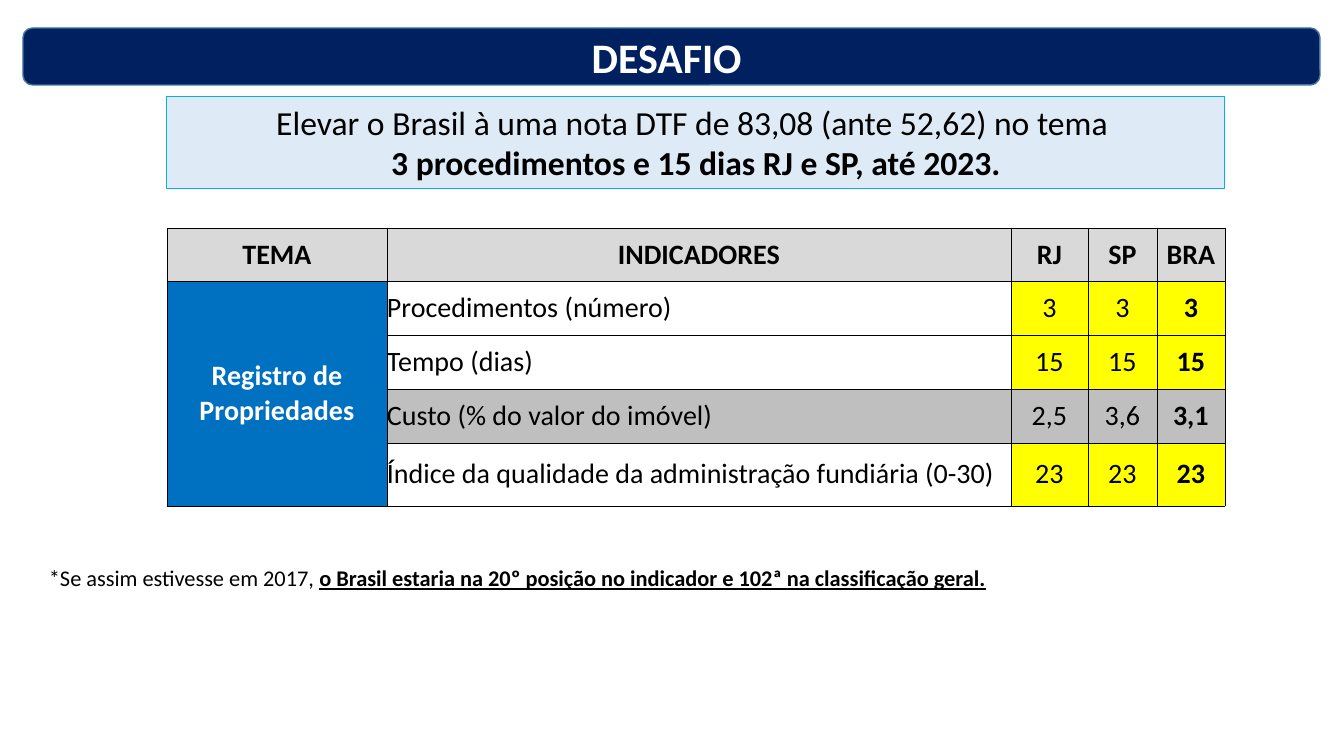
from dataclasses import dataclass

from lxml.etree import SubElement
from pptx import Presentation
from pptx.dml.color import RGBColor
from pptx.enum.shapes import MSO_SHAPE
from pptx.enum.text import MSO_ANCHOR, MSO_AUTO_SIZE, PP_ALIGN
from pptx.oxml.ns import qn
from pptx.util import Emu, Pt


@dataclass(frozen=True)
class Theme:
    font: str = "Calibri"
    black: str = "000000"
    white: str = "FFFFFF"
    navy: str = "002060"
    navy_line: str = "43739E"
    pale_blue: str = "DEEBF7"
    cyan: str = "00B0F0"
    blue: str = "0070C0"
    header: str = "D9D9D9"
    muted: str = "BFBFBF"
    target: str = "FFFF00"
    title_size: int = 30
    goal_size: int = 24
    table_size: int = 20
    note_size: int = 16
    border: float = 0.5


class SlideBuilder:
    def __init__(self, prs, theme):
        self.theme = theme
        self.s = prs.slides.add_slide(prs.slide_layouts[6])

    @staticmethod
    def px(value):
        return Emu(round(value * 914400 / 100.8))

    def box(self, *lengths):
        return [self.px(v) for v in lengths]

    def style(self, r, size, color, bold=False, underline=False):
        r.font.name = self.theme.font
        r.font.size = Pt(size)
        r.font.bold = bold
        r.font.underline = underline
        r.font.color.rgb = RGBColor.from_string(color)

    def panel(self, kind, at, fill, line, width):
        sp = self.s.shapes.add_shape(kind, *self.box(*at))
        sp.shadow.inherit = False
        sp.fill.solid()
        sp.fill.fore_color.rgb = RGBColor.from_string(fill)
        sp.line.color.rgb = RGBColor.from_string(line)
        sp.line.width = Pt(width)
        return sp

    def title(self, text, at):
        t = self.theme
        sp = self.panel(MSO_SHAPE.ROUNDED_RECTANGLE, at, t.navy, t.navy_line, 1)
        tf = sp.text_frame
        tf.text = text
        tf.vertical_anchor = MSO_ANCHOR.MIDDLE
        p = tf.paragraphs[0]
        p.alignment = PP_ALIGN.CENTER
        self.style(p.runs[0], t.title_size, t.white, bold=True)

    def goal(self, lines, at):
        t = self.theme
        sp = self.panel(MSO_SHAPE.RECTANGLE, at, t.pale_blue, t.cyan, 0.75)
        tf = sp.text_frame
        tf.text = "\n".join(lines)
        tf.word_wrap = True
        tf.auto_size = MSO_AUTO_SIZE.SHAPE_TO_FIT_TEXT
        tf.vertical_anchor = MSO_ANCHOR.TOP
        for i, p in enumerate(tf.paragraphs):
            p.alignment = PP_ALIGN.CENTER
            self.style(p.runs[0], t.goal_size, t.black, bold=i > 0)

    def note(self, plain, strong, at):
        t = self.theme
        tf = self.s.shapes.add_textbox(*self.box(*at)).text_frame
        tf.word_wrap = True
        tf.auto_size = MSO_AUTO_SIZE.SHAPE_TO_FIT_TEXT
        p = tf.paragraphs[0]
        for text, marked in ((plain, False), (strong, True)):
            r = p.add_run()
            r.text = text
            self.style(r, t.note_size, t.black, marked, marked)

    def cell(self, cell, text, fill, color, bold, align):
        t = self.theme
        tc_pr = cell._tc.get_or_add_tcPr()
        for side in ("a:lnL", "a:lnR", "a:lnT", "a:lnB"):
            ln = SubElement(tc_pr, qn(side), w=str(Pt(t.border)))
            solid = SubElement(ln, qn("a:solidFill"))
            SubElement(solid, qn("a:srgbClr"), val=t.black)
        if fill:
            cell.fill.solid()
            cell.fill.fore_color.rgb = RGBColor.from_string(fill)
        else:
            cell.fill.background()
        cell.margin_left = cell.margin_right = 0
        cell.margin_top = cell.margin_bottom = 0
        cell.vertical_anchor = MSO_ANCHOR.MIDDLE
        cell.text = text
        p = cell.text_frame.paragraphs[0]
        p.alignment = align
        for r in p.runs:
            self.style(r, t.table_size, color, bold)

    def table(self, header, topic, indicators, at, widths, heights):
        t = self.theme
        tbl = self.s.shapes.add_table(
            len(heights), len(widths), *self.box(*at, sum(widths), sum(heights))
        ).table
        tbl.first_row = tbl.horz_banding = False
        for col, width in zip(tbl.columns, widths):
            col.width = self.px(width)
        for row, height in zip(tbl.rows, heights):
            row.height = self.px(height)

        for c, text in enumerate(header):
            self.cell(tbl.cell(0, c), text, t.header, t.black, True, PP_ALIGN.CENTER)
        for i, (name, values, is_target) in enumerate(indicators, 1):
            self.cell(tbl.cell(i, 0), topic if i == 1 else "", t.blue, t.white,
                      True, PP_ALIGN.CENTER)
            self.cell(tbl.cell(i, 1), name, None if is_target else t.muted, t.black,
                      False, PP_ALIGN.LEFT)
            for c, value in enumerate(values, 2):
                self.cell(tbl.cell(i, c), value, t.target if is_target else t.muted,
                          t.black, header[c] == "BRA", PP_ALIGN.CENTER)
        tbl.cell(1, 0).merge(tbl.cell(len(indicators), 0))


def main():
    prs = Presentation()
    prs.slide_width = SlideBuilder.px(1344)
    prs.slide_height = SlideBuilder.px(756)
    b = SlideBuilder(prs, Theme())

    b.title("DESAFIO ", (23, 28, 1297, 57))
    b.goal(
        (
            "Elevar o Brasil à uma nota DTF de 83,08 (ante 52,62) no tema ",
            " 3 procedimentos e 15 dias RJ e SP, até 2023. ",
        ),
        (167, 97, 1058, 92),
    )
    b.note(
        "*Se assim estivesse em 2017, ",
        "o Brasil estaria na 20º posição no indicador e 102ª na classificação geral.",
        (39, 559, 1168, 37),
    )
    b.table(
        header=("TEMA", "INDICADORES", "RJ", "SP", "BRA"),
        topic="Registro de Propriedades",
        indicators=(
            ("Procedimentos (número)", ("3", "3", "3"), True),
            ("Tempo (dias)", ("15", "15", "15"), True),
            ("Custo (% do valor do imóvel)", ("2,5", "3,6", "3,1"), False),
            ("Índice da qualidade da administração fundiária (0-30)",
             ("23", "23", "23"), True),
        ),
        at=(167, 228),
        widths=(220, 624, 77, 69, 68),
        heights=(53, 54, 54, 54, 63),
    )
    prs.save("out.pptx")


if __name__ == "__main__":
    main()
